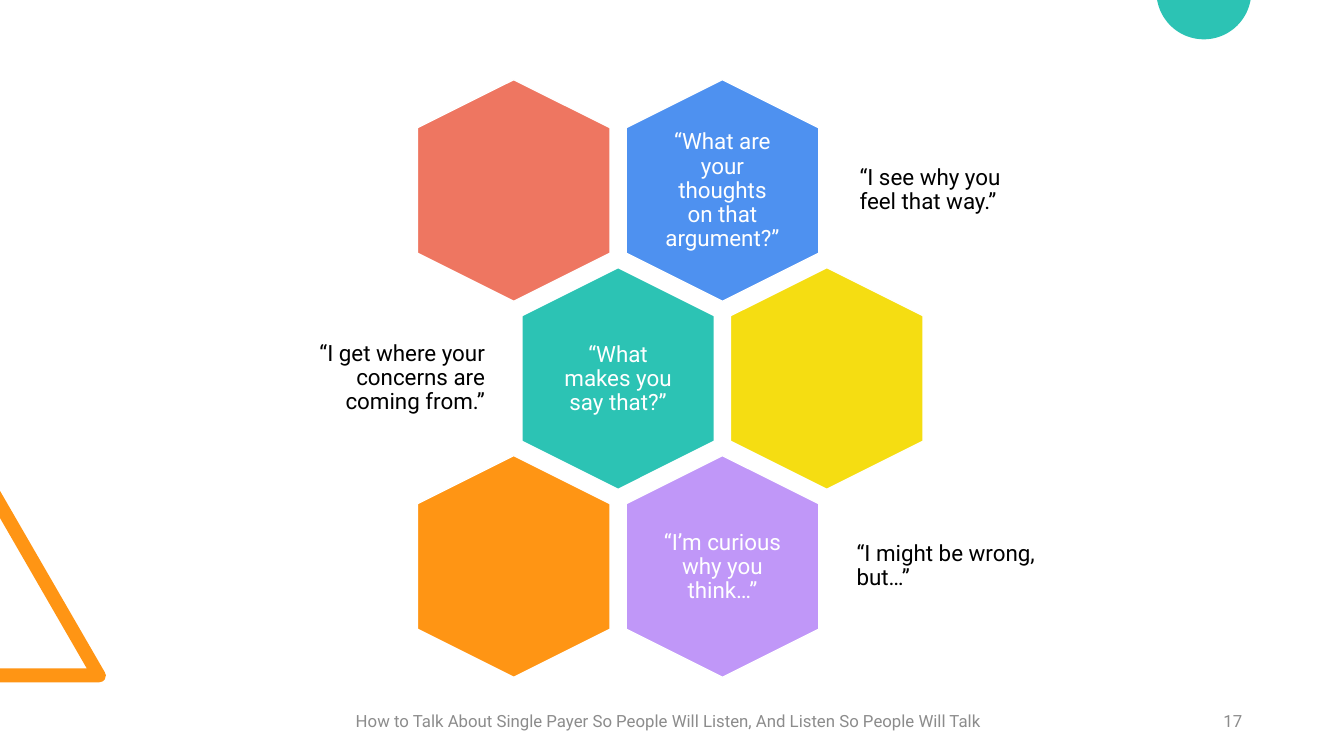
from dataclasses import dataclass
from math import asin, cos, pi, sin

from pptx import Presentation
from pptx.dml.color import RGBColor as Rgb
from pptx.enum.shapes import MSO_SHAPE as Shape
from pptx.enum.text import MSO_ANCHOR as Anchor, PP_ALIGN as Align
from pptx.util import Emu, Pt

SCALE = 9144


@dataclass(frozen=True)
class Theme:
    font: str = "Roboto"
    body: int = 16
    small: int = 12
    white: str = "FFFFFF"
    black: str = "000000"
    gray: str = "8C8C8C"
    blue: str = "4E91F0"
    coral: str = "EE7661"
    teal: str = "2CC3B4"
    yellow: str = "F5DD12"
    purple: str = "C097F8"
    orange: str = "FF9514"


THEME = Theme()


def px(num):
    return Emu(round(num * SCALE))


def paint(shape, color):
    shape.shadow.inherit = False
    shape.fill.solid()
    shape.fill.fore_color.rgb = Rgb.from_string(color)


def label(slide, box, text, size, color, align, inset=(10, 5), space=1.0):
    item = slide.shapes.add_textbox(*map(px, box))
    frame = item.text_frame
    frame.word_wrap = True
    frame.vertical_anchor = Anchor.MIDDLE
    frame.margin_left = frame.margin_right = px(inset[0])
    frame.margin_top = frame.margin_bottom = px(inset[1])
    frame.text = text
    para = frame.paragraphs[0]
    para.alignment = align
    para.line_spacing = space
    font = para.runs[0].font
    font.name = THEME.font
    font.size = Pt(size)
    font.color.rgb = Rgb.from_string(color)


def outline(slide, rings, color):
    (first, *rest), *holes = [[(px(x), px(y)) for x, y in ring] for ring in rings]
    pen = slide.shapes.build_freeform(*first)
    pen.add_line_segments(rest)
    for start, *others in holes:
        pen.move_to(*start)
        pen.add_line_segments(others)
    shape = pen.convert_to_shape()
    paint(shape, color)
    shape.line.fill.background()


def decor(slide, box):
    left, top, width, height = box
    base = top + height
    corner = [(104, 83), (105, 80), (104, 76), (102, 74), (98, 73)]
    edge = [(0, 73), (0, 87), (86, 87), (0, 236), (0, 263), *corner]
    outline(slide, [[(left + x, base - y) for x, y in edge]], THEME.orange)
    radius, lift, mid = 47, 8, left + width - 139
    start = asin(lift / radius)
    turns = [start + (pi - 2 * start) * step / 60 for step in range(61)]
    arc = [(mid + radius * cos(t), top - lift + radius * sin(t)) for t in turns]
    outline(slide, [arc], THEME.teal)


def hexes(slide, box):
    left, top, width, height = box
    long, short = 220, 191
    step, drop = 207, (height - long) / 2
    cells = [
        (0, 1, THEME.blue, "“What are your thoughts on that argument?”"),
        (0, 0, THEME.coral, ""),
        (1, 0, THEME.teal, "“What makes you say that?”"),
        (1, 1, THEME.yellow, ""),
        (2, 1, THEME.purple, "“I’m curious why you think…”"),
        (2, 0, THEME.orange, ""),
    ]
    sides = [
        (0, 1, 129, 190, Align.LEFT, "“I see why you feel that way.”"),
        (1, 0, -318, 193, Align.RIGHT, "“I get where your concerns are coming from.”"),
        (2, 1, 126, 195, Align.LEFT, "“I might be wrong, but…”"),
    ]

    def center(row, col):
        shift = step / 2 if row % 2 else 0
        return left + short / 2 + col * step + shift, top + long / 2 + row * drop

    def quote(place, text, color, align):
        label(slide, place, text, THEME.body, color, align, (7, 7), 0.9)

    for row, col, color, text in cells:
        x, y = center(row, col)
        place = (x - long / 2, y - short / 2, long, short)
        cell = slide.shapes.add_shape(Shape.HEXAGON, *map(px, place))
        cell.adjustments[0] = 0.25
        cell.rotation = 90
        paint(cell, color)
        cell.line.color.rgb = Rgb.from_string(THEME.white)
        cell.line.width = Pt(1)
        if text:
            quote((x - 66, y - 75, 132, 151), text, THEME.white, Align.CENTER)
    for row, col, gap, span, align, text in sides:
        x, y = center(row, col)
        quote((x + gap, y - 66, span, 132), text, THEME.black, align)


def footer(slide, box):
    left, top, width, height = box
    title = "How to Talk About Single Payer So People Will Listen, And Listen So People Will Talk"
    label(slide, (left, top, 1092, height), title, THEME.small, THEME.gray, Align.CENTER)
    page = (left + width - 300, top, 300, height)
    label(slide, page, "17", THEME.small, THEME.gray, Align.RIGHT)


def main():
    deck = Presentation()
    deck.slide_width, deck.slide_height = px(1333), px(750)
    slide = deck.slides.add_slide(deck.slide_layouts[6])
    decor(slide, (0, 0, 1333, 750))
    footer(slide, (117, 695, 1125, 40))
    hexes(slide, (414, 79, 502, 593))
    deck.save("out.pptx")


if __name__ == "__main__":
    main()
